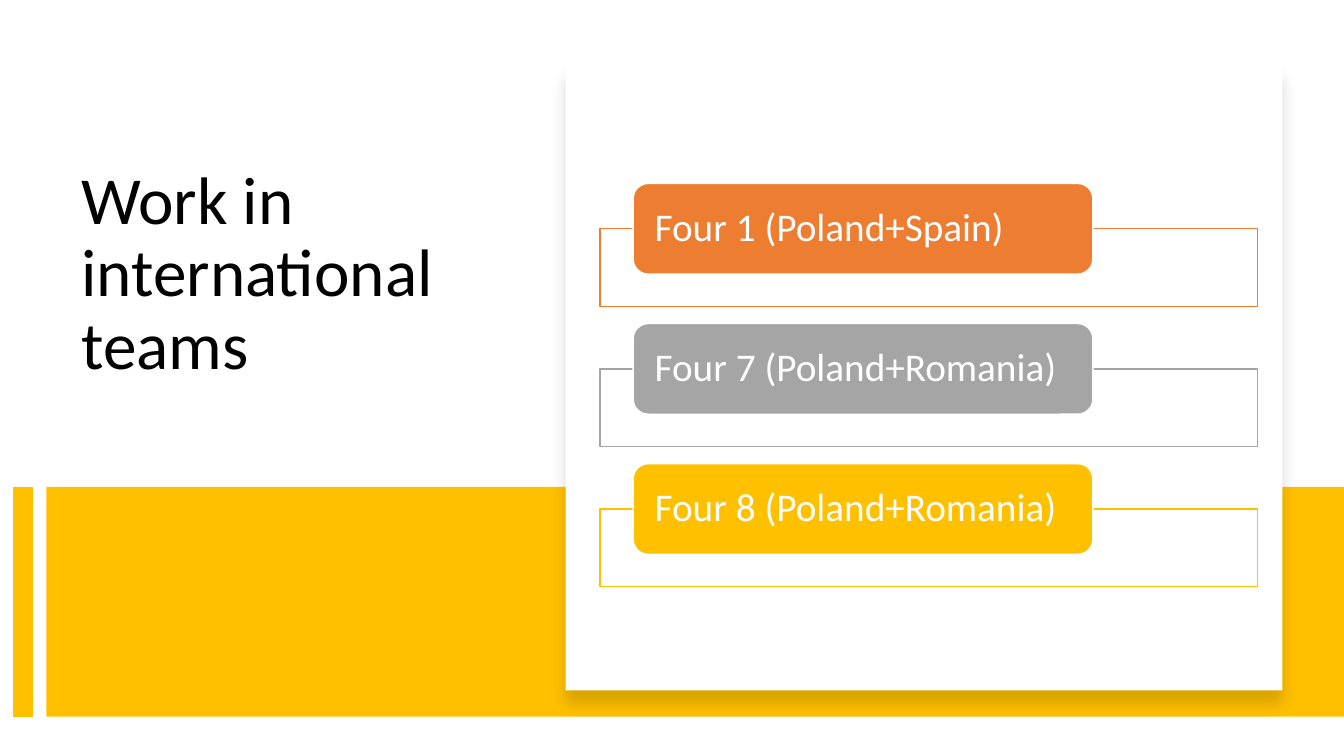
from lxml import etree
from pptx import Presentation
from pptx.dml.color import RGBColor
from pptx.enum.shapes import MSO_CONNECTOR, MSO_SHAPE
from pptx.enum.text import MSO_ANCHOR, PP_ALIGN
from pptx.oxml.ns import qn
from pptx.util import Inches, Pt

RECTANGLE = MSO_SHAPE.RECTANGLE
ROUNDED = MSO_SHAPE.ROUNDED_RECTANGLE
STRAIGHT = MSO_CONNECTOR.STRAIGHT
TOP, MIDDLE = MSO_ANCHOR.TOP, MSO_ANCHOR.MIDDLE
LEFT = PP_ALIGN.LEFT

BLACK = RGBColor(0x00, 0x00, 0x00)
WHITE = RGBColor(0xFF, 0xFF, 0xFF)
ORANGE = RGBColor(0xED, 0x7D, 0x31)
GRAY = RGBColor(0xA5, 0xA5, 0xA5)
GOLD = RGBColor(0xFF, 0xC0, 0x00)

BAND_TOP, BAND_HEIGHT = 4.83, 2.28
FIRST_TEAM_TOP, TEAM_STEP = 1.82, 1.39
TEAMS = [
    ("Four 1 (Poland+Spain)", ORANGE),
    ("Four 7 (Poland+Romania)", GRAY),
    ("Four 8 (Poland+Romania)", GOLD),
]


class SlideBuilder:
    font_name = "Calibri"
    line_spacing = 0.9

    def __init__(self, slide):
        self.slide = slide

    def add_box(self, kind, left, top, width, height, fill, line=None):
        shape = self.slide.shapes.add_shape(
            kind, Inches(left), Inches(top), Inches(width), Inches(height))
        shape.shadow.inherit = False
        shape.fill.solid()
        shape.fill.fore_color.rgb = fill
        if line is None:
            shape.line.fill.background()
        else:
            shape.line.color.rgb = line
            shape.line.width = Pt(1)
        return shape

    def add_line(self, x1, y1, x2, y2, color, width):
        connector = self.slide.shapes.add_connector(
            STRAIGHT, Inches(x1), Inches(y1), Inches(x2), Inches(y2))
        connector.line.color.rgb = color
        connector.line.width = Pt(width)
        etree.SubElement(connector._element.spPr, qn("a:effectLst"))

    def add_text_box(self, left, top, width, height):
        return self.slide.shapes.add_textbox(
            Inches(left), Inches(top), Inches(width), Inches(height))

    def set_text(self, shape, text, size, color, anchor, side_inset, end_inset):
        frame = shape.text_frame
        frame_format = {
            "word_wrap": True,
            "vertical_anchor": anchor,
            "margin_left": Inches(side_inset),
            "margin_right": Inches(side_inset),
            "margin_top": Inches(end_inset),
            "margin_bottom": Inches(end_inset),
        }
        for name, value in frame_format.items():
            setattr(frame, name, value)
        paragraph = frame.paragraphs[0]
        paragraph.text = text
        paragraph.alignment = LEFT
        paragraph.line_spacing = self.line_spacing
        for name, value in {"name": self.font_name, "size": Pt(size)}.items():
            setattr(paragraph.font, name, value)
        paragraph.font.color.rgb = color

    def add_drop_shadow(self, shape):
        """Cast a soft black shadow straight down."""
        effects = shape._element.spPr.find(qn("a:effectLst"))
        shadow = etree.SubElement(
            effects, qn("a:outerShdw"), blurRad=str(Pt(11)), dist=str(Pt(10)),
            dir="5400000", algn="t", rotWithShape="0")
        color = etree.SubElement(shadow, qn("a:srgbClr"), val=str(BLACK))
        etree.SubElement(color, qn("a:alpha"), val="15000")

    def add_team(self, top, label, color):
        """Add an outlined frame with a filled label over its top edge."""
        frame = self.add_box(RECTANGLE, 5.95, top + 0.45, 6.52, 0.77, WHITE, color)
        fill_color = frame._element.spPr.find(qn("a:solidFill"))[0]
        etree.SubElement(fill_color, qn("a:alpha"), val="90000")
        tab = self.add_box(ROUNDED, 6.28, top, 4.56, 0.9, color, WHITE)
        self.set_text(tab, label, 28, WHITE, MIDDLE, 0.17, 0)


def main():
    presentation = Presentation()
    presentation.slide_width = Inches(13.33)
    presentation.slide_height = Inches(7.5)
    slide = presentation.slides.add_slide(presentation.slide_layouts[6])
    builder = SlideBuilder(slide)

    title = builder.add_text_box(0.71, 1.6, 4.15, 2.94)
    builder.set_text(title, "Work in international teams", 48, BLACK, TOP, 0.1, 0.05)

    builder.add_box(RECTANGLE, 0.46, BAND_TOP, 12.87, BAND_HEIGHT, GOLD)
    builder.add_line(0.23, BAND_TOP, 0.23, BAND_TOP + BAND_HEIGHT, GOLD, 14)

    card = builder.add_box(RECTANGLE, 5.61, 0.64, 7.11, 6.21, WHITE)
    builder.add_drop_shadow(card)

    for index, (label, color) in enumerate(TEAMS):
        builder.add_team(FIRST_TEAM_TOP + index * TEAM_STEP, label, color)

    presentation.save("out.pptx")


if __name__ == "__main__":
    main()
